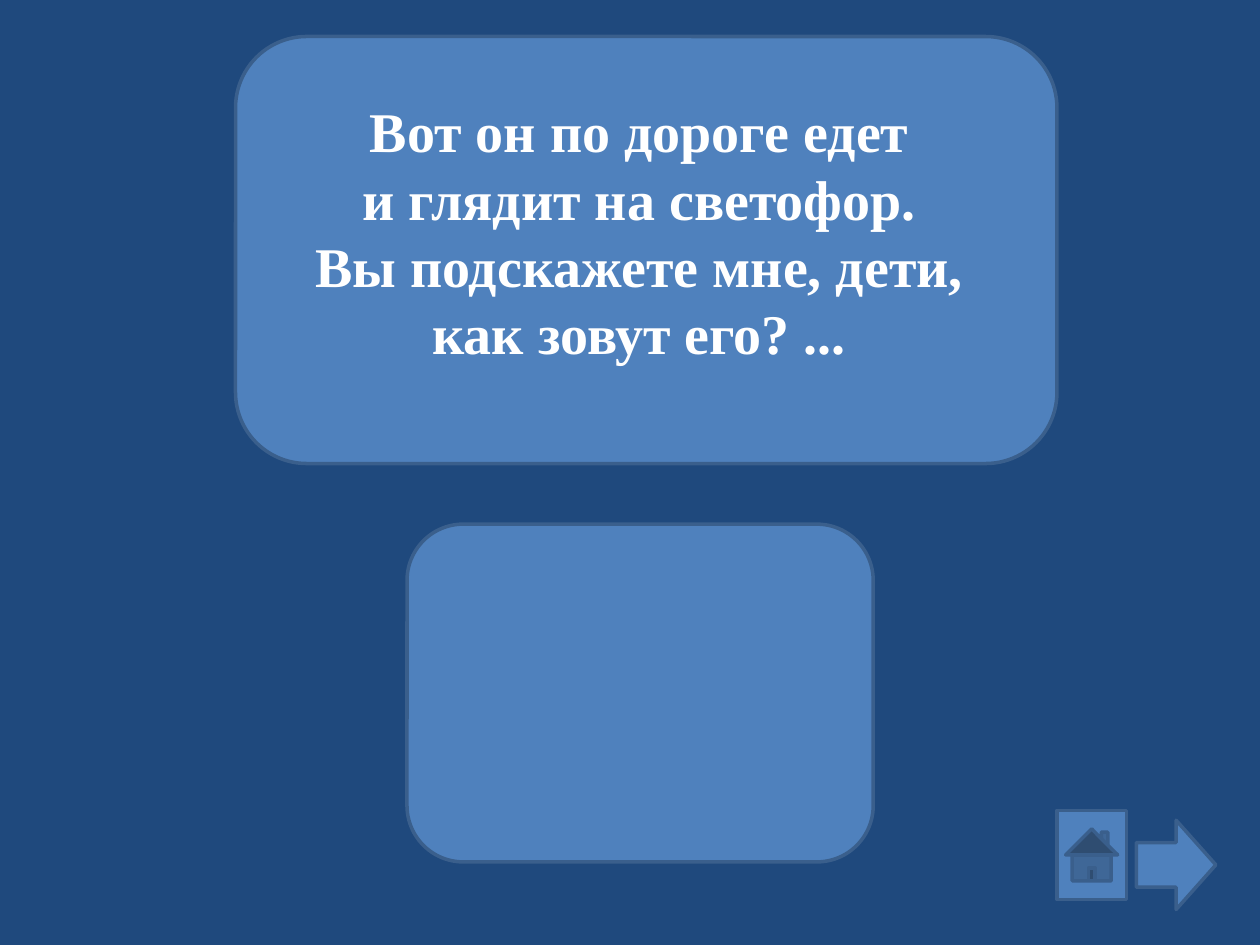
from pptx import Presentation
from pptx.dml.color import RGBColor
from pptx.enum.shapes import MSO_SHAPE as Shape
from pptx.enum.text import MSO_AUTO_SIZE as AutoSize, PP_ALIGN as Align
from pptx.util import Pt


def color(value):
    return RGBColor.from_string(value)


def apply_format(target, values):
    for name, value in values.items():
        setattr(target, name, value)


class RiddleSlide:
    background = "1F497D"
    fill = "4F81BD"
    outline = "3A5F8C"
    text_color = "FFFFFF"
    font = {"name": "Times New Roman", "size": Pt(32), "bold": True}
    frame = {"word_wrap": True, "auto_size": AutoSize.SHAPE_TO_FIT_TEXT}

    def __init__(self, presentation):
        self.slide = presentation.slides.add_slide(presentation.slide_layouts[6])
        background = self.slide.background.fill
        background.solid()
        background.fore_color.rgb = color(self.background)

    def add_shape(self, kind, *box):
        shape = self.slide.shapes.add_shape(kind, *map(Pt, box))
        shape.shadow.inherit = False
        shape.fill.solid()
        shape.fill.fore_color.rgb = color(self.fill)
        shape.line.color.rgb = color(self.outline)
        shape.line.width = Pt(2)

    def add_text(self, lines, *box):
        frame = self.slide.shapes.add_textbox(*map(Pt, box)).text_frame
        apply_format(frame, self.frame)
        frame.text = "\n".join(lines)
        for paragraph in frame.paragraphs:
            paragraph.alignment = Align.CENTER
            font = paragraph.runs[0].font
            apply_format(font, self.font)
            font.color.rgb = color(self.text_color)


def main():
    presentation = Presentation()
    apply_format(presentation, {"slide_width": Pt(720), "slide_height": Pt(540)})
    riddle = RiddleSlide(presentation)
    riddle.add_shape(Shape.ROUNDED_RECTANGLE, 134.6, 20.9, 469.4, 244)
    riddle.add_shape(Shape.ROUNDED_RECTANGLE, 232.6, 299.5, 266.4, 193)
    riddle.add_text(
        [
            "Вот он по дороге едет",
            "и глядит на светофор.",
            "Вы подскажете мне, дети,",
            "как зовут его? ...",
        ],
        152.6, 51.8, 425.5, 162.7,
    )
    riddle.add_shape(Shape.ACTION_BUTTON_HOME, 604, 463, 39.6, 51)
    riddle.add_shape(Shape.RIGHT_ARROW, 649.4, 468.7, 45.4, 51)
    presentation.save("out.pptx")


if __name__ == "__main__":
    main()
